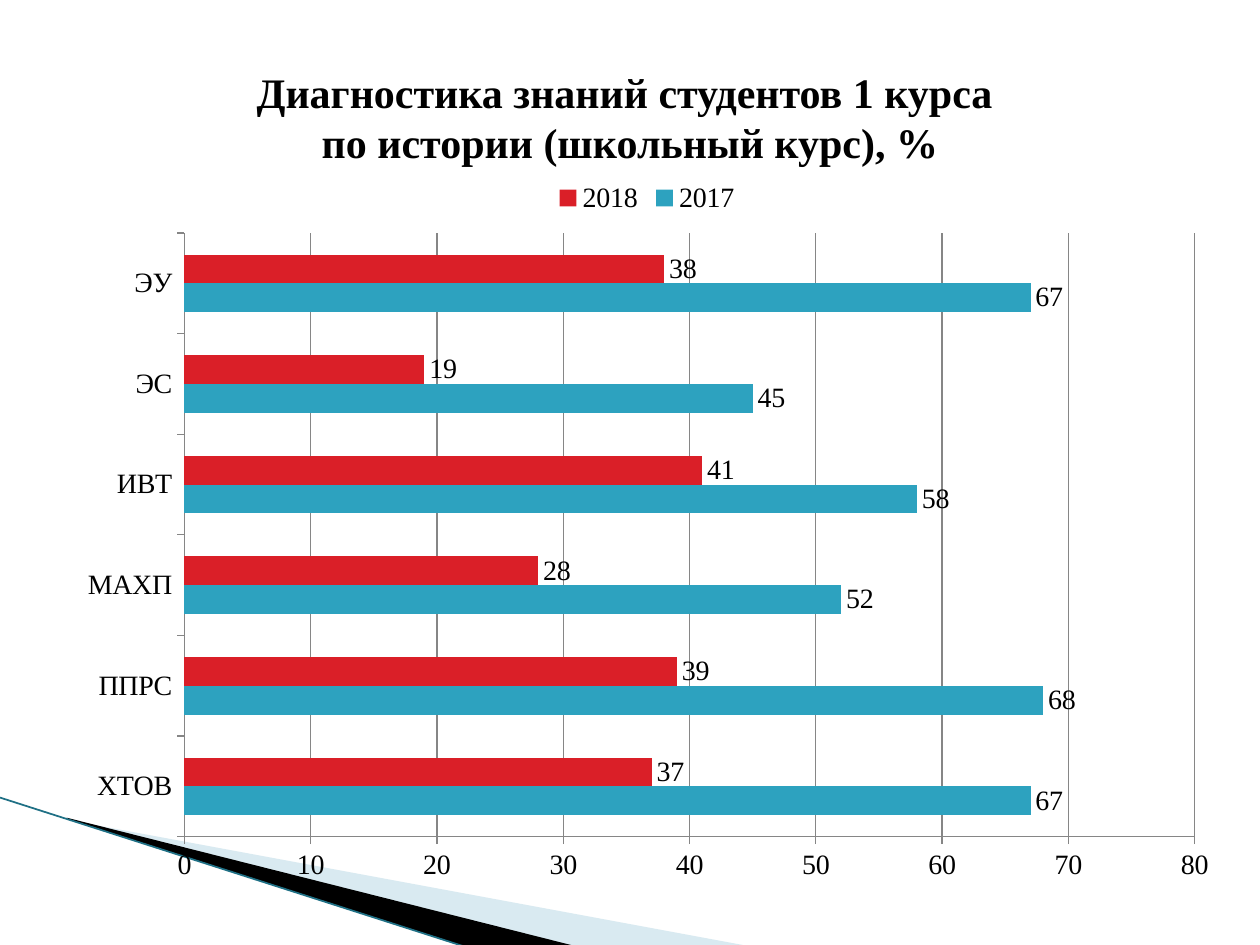
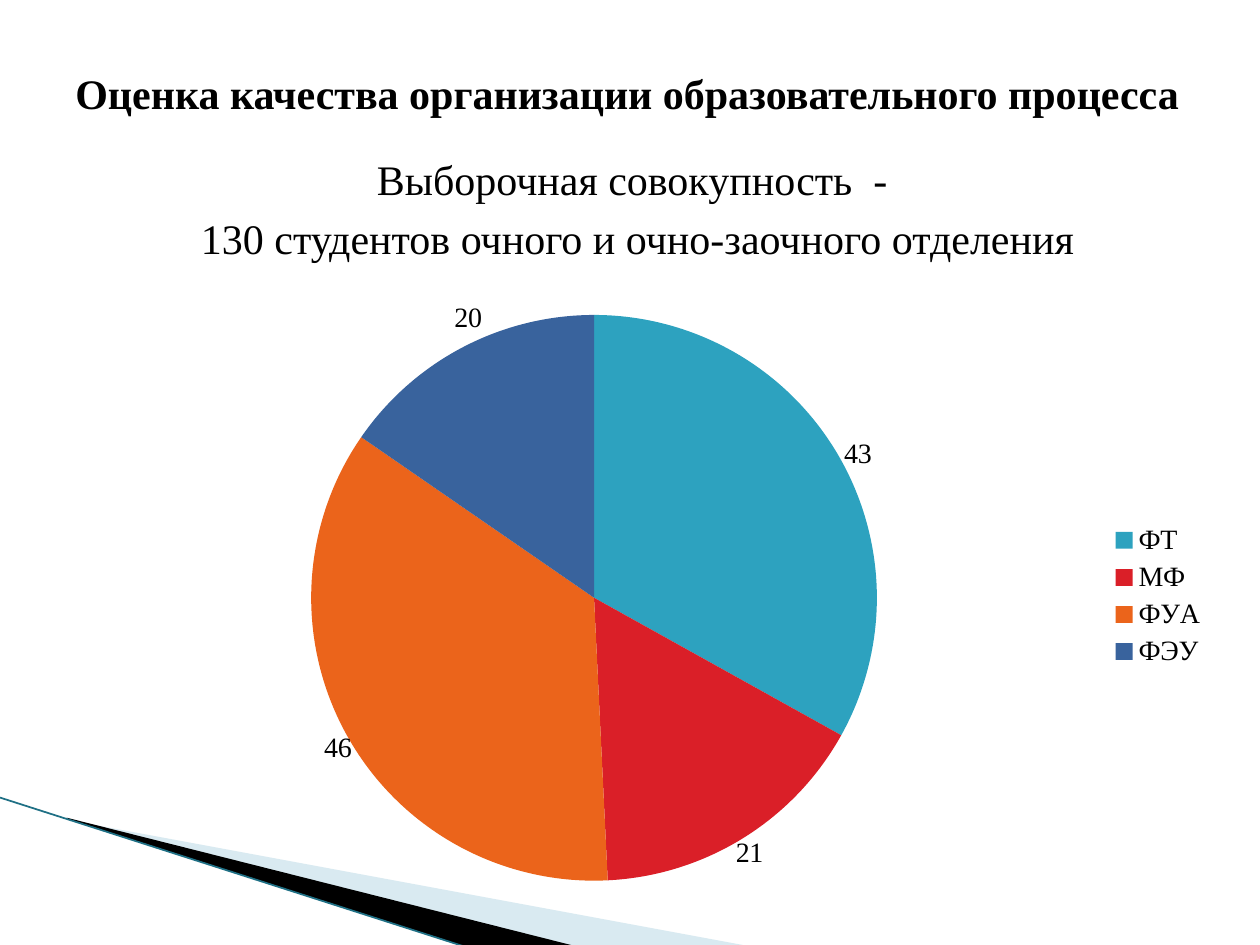
from dataclasses import dataclass

from lxml import etree
from pptx import Presentation
from pptx.chart.data import CategoryChartData
from pptx.dml.color import RGBColor
from pptx.enum.chart import (XL_CHART_TYPE, XL_LABEL_POSITION,
                             XL_LEGEND_POSITION, XL_TICK_MARK)
from pptx.enum.text import MSO_ANCHOR, PP_ALIGN
from pptx.oxml.ns import qn
from pptx.util import Pt

PX = 9144


@dataclass(frozen=True)
class Theme:
    """Colours, font and type sizes shared by both slides."""
    font: str = "Times New Roman"
    heading: int = 24
    label: int = 16
    text: str = "000000"
    grid: str = "868686"
    wedge: str = "A0CBDC"
    edge: str = "1F7085"
    teal: str = "2DA2BF"
    red: str = "DA1F28"
    orange: str = "EB641B"
    blue: str = "39639D"


T = Theme()


def px(*lengths):
    """Turn px lengths into EMU."""
    return [n * PX for n in lengths]


def rgb(color):
    """Turn a hex string into a colour."""
    return RGBColor.from_string(color)


def set_font(font, size, bold=False):
    """Apply the theme font at a size."""
    font.name = T.font
    font.size = Pt(size)
    font.bold = bold
    font.color.rgb = rgb(T.text)


def add_wedge(s, points, color, alpha=None):
    """Draw one filled outline of the corner band."""
    builder = s.shapes.build_freeform(*points[0], scale=PX)
    builder.add_line_segments(points[1:], close=True)
    sp = builder.convert_to_shape()
    sp.shadow.inherit = False
    sp.fill.solid()
    sp.fill.fore_color.rgb = rgb(color)
    sp.line.fill.background()
    if alpha:
        clr = sp.fill._xPr.find(".//" + qn("a:srgbClr"))
        etree.SubElement(clr, qn("a:alpha")).set("val", str(alpha * 1000))


def add_corner_band(s, left, top):
    """Draw the slanted band that runs to the bottom edge."""
    def at(*points):
        return [(left + x, top + y) for x, y in points]

    add_wedge(s, at((55, 18), (595, 118), (456, 118), (55, 17)), T.wedge, 40)
    add_wedge(s, at((53, 16), (457, 118), (372, 119), (54, 17)), T.text)
    line = s.shapes.add_connector(1, *px(left, top, left + 371, top + 119))
    line.line.color.rgb = rgb(T.edge)
    line.line.width = Pt(1)
    etree.SubElement(line._element.spPr, qn("a:effectLst"))


def add_text(s, box, paragraphs, bold=False, align=PP_ALIGN.CENTER,
             anchor=MSO_ANCHOR.MIDDLE, space=0, indent=None):
    """Write paragraphs, each a list of lines, in a text box."""
    tf = s.shapes.add_textbox(*px(*box)).text_frame
    tf.word_wrap = True
    tf.vertical_anchor = anchor
    for i, lines in enumerate(paragraphs):
        p = tf.add_paragraph() if i else tf.paragraphs[0]
        p.alignment = align
        if i:
            p.space_before = Pt(space)
        if indent:
            for key, value in zip(("marL", "indent"), px(*indent)):
                p._p.get_or_add_pPr().set(key, str(value))
        for j, line in enumerate(lines):
            if j:
                p.add_line_break()
            r = p.add_run()
            r.text = line
            set_font(r.font, T.heading, bold)


def make_layout(**values):
    """Build a manual chart layout from its fields."""
    layout = etree.Element(qn("c:layout"))
    manual = etree.SubElement(layout, qn("c:manualLayout"))
    for key, value in values.items():
        etree.SubElement(manual, qn("c:" + key)).set("val", str(value))
    return layout


def add_chart(s, kind, box, plot_box, cats, series, legend):
    """Add a chart whose plot fills plot_box, relative to box."""
    data = CategoryChartData()
    data.categories = cats
    for name, values in series:
        data.add_series(name, values)
    chart = s.shapes.add_chart(kind, *px(*box), data).chart
    chart.has_title = False
    set_font(chart.font, T.label)
    chart.has_legend = True
    chart.legend.position = legend
    chart.legend.include_in_layout = False
    x, y, w, h = [round(n / size, 3) for n, size in zip(plot_box, box[2:] * 2)]
    area = chart._chartSpace.find(".//" + qn("c:plotArea"))
    for old in area.findall(qn("c:layout")):
        area.remove(old)
    area.insert(0, make_layout(layoutTarget="inner", xMode="edge",
                               yMode="edge", x=x, y=y, w=w, h=h))
    for ser in chart.plots[0].series:
        labels = ser.data_labels
        labels.show_value = True
        labels.position = XL_LABEL_POSITION.OUTSIDE_END
        set_font(labels.font, T.label)
    return chart


def fill_with(part, color):
    """Give a series or a point a solid fill."""
    part.format.fill.solid()
    part.format.fill.fore_color.rgb = rgb(color)


def add_scores_chart(s, box):
    """Add the bar chart of test scores by programme."""
    chart = add_chart(
        s, XL_CHART_TYPE.BAR_CLUSTERED, box, (96, 52, 802, 479),
        ["ХТОВ", "ППРС", "МАХП", "ИВТ", "ЭС", "ЭУ"],
        [("2017", (67, 68, 52, 58, 45, 67)),
         ("2018", (37, 39, 28, 41, 19, 38))],
        XL_LEGEND_POSITION.TOP)
    plot = chart.plots[0]
    plot.gap_width = 150
    plot.overlap = 0
    plot.vary_by_categories = False
    for ser, color in zip(plot.series, (T.teal, T.red)):
        fill_with(ser, color)
    values = chart.value_axis
    values.minimum_scale, values.maximum_scale, values.major_unit = 0, 80, 10
    values.has_major_gridlines = True
    values.major_gridlines.format.line.color.rgb = rgb(T.grid)
    for axis in (values, chart.category_axis):
        axis.major_tick_mark = XL_TICK_MARK.OUTSIDE
        axis.format.line.color.rgb = rgb(T.grid)
        set_font(axis.tick_labels.font, T.label)


def add_sample_chart(s, box):
    """Add the pie chart of students by faculty."""
    chart = add_chart(
        s, XL_CHART_TYPE.PIE, box, (185, 31, 449, 449),
        ["ФТ", "МФ", "ФУА", "ФЭУ"], [("Series 1", (43, 21, 46, 20))],
        XL_LEGEND_POSITION.RIGHT)
    plot = chart.plots[0]
    plot.vary_by_categories = True
    colors = (T.teal, T.red, T.orange, T.blue)
    shifts = ((0, 0.03), (-0.01, -0.01), (0.01, -0.01), (0.02, -0.01))
    for i, (color, (x, y)) in enumerate(zip(colors, shifts)):
        point = plot.series[0].points[i]
        fill_with(point, color)
        label = point.data_label
        set_font(label.font, T.label)
        label.position = XL_LABEL_POSITION.OUTSIDE_END
        label._dLbl.insert(1, make_layout(x=x, y=y))


def add_scores_slide(prs):
    """Build the slide on the history test."""
    s = prs.slides.add_slide(prs.slide_layouts[6])
    add_corner_band(s, 0, 633)
    add_scores_chart(s, (50, 133, 927, 578))
    add_text(s, (50, 30, 900, 125),
             [["Диагностика знаний студентов 1 курса ",
               "по истории (школьный курс), %"]], bold=True)


def add_sample_slide(prs):
    """Build the slide on the survey sample."""
    s = prs.slides.add_slide(prs.slide_layouts[6])
    add_corner_band(s, 0, 633)
    add_text(s, (50, 117, 900, 602),
             [["Выборочная совокупность  - "],
              ["130 студентов очного и очно-заочного отделения"]],
             anchor=MSO_ANCHOR.TOP, space=5, indent=(40, -28))
    add_text(s, (50, 30, 900, 87),
             [["Оценка качества организации образовательного процесса"]],
             bold=True, align=PP_ALIGN.LEFT)
    add_sample_chart(s, (62, 219, 906, 508))


def main():
    """Build and save the presentation."""
    prs = Presentation()
    prs.slide_width, prs.slide_height = px(1000, 750)
    add_scores_slide(prs)
    add_sample_slide(prs)
    prs.save("out.pptx")


if __name__ == "__main__":
    main()
